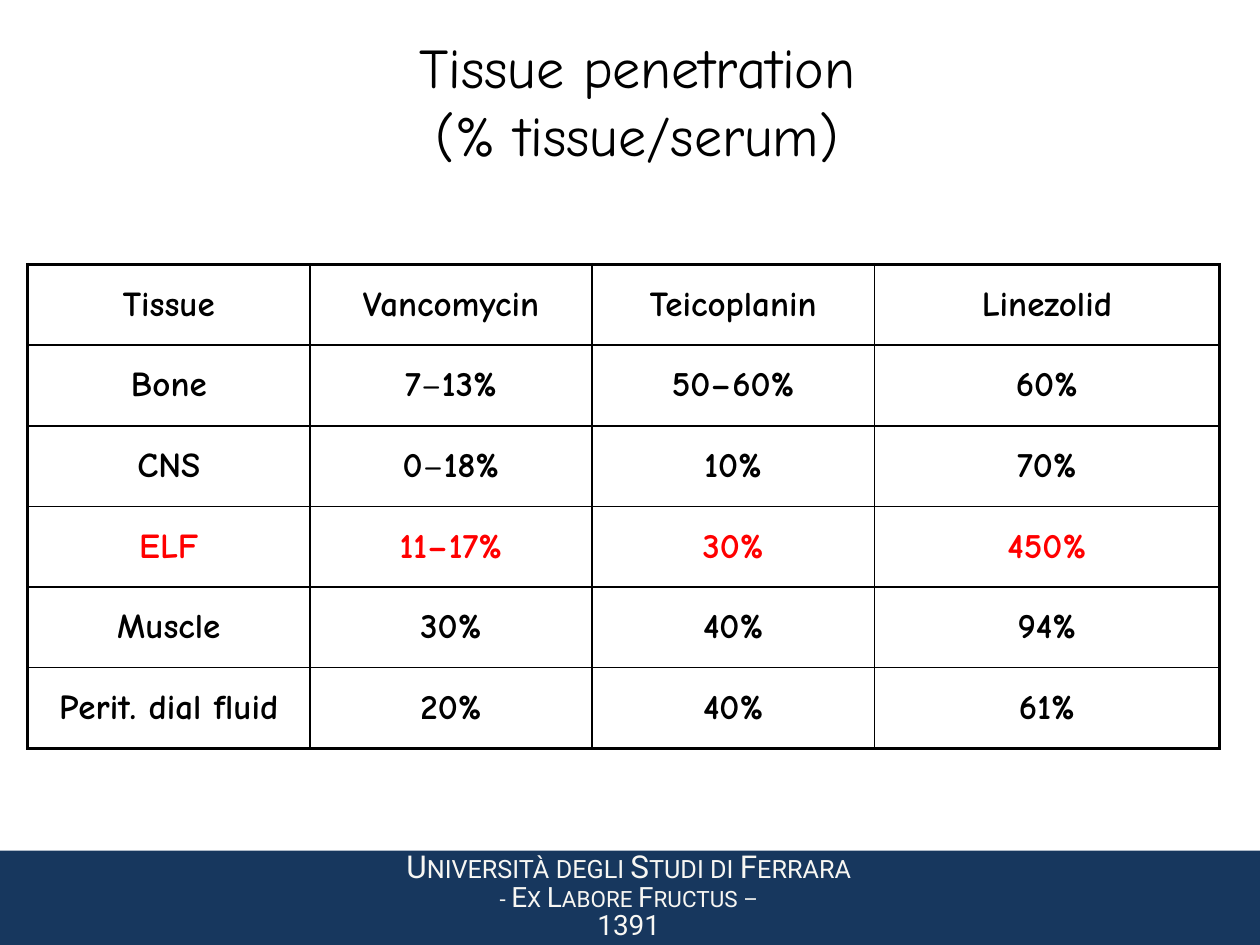
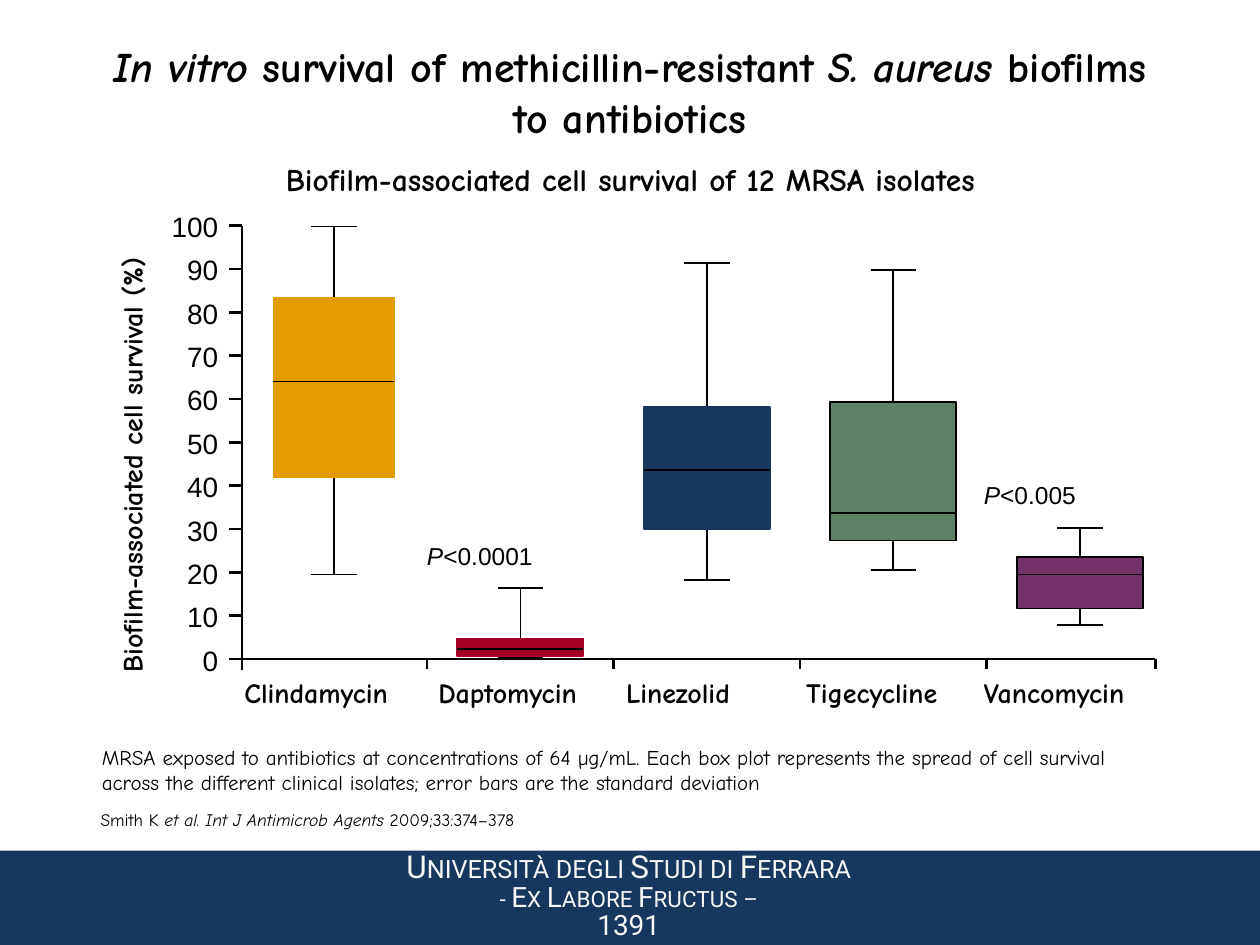
from dataclasses import dataclass

from lxml.etree import SubElement
from pptx import Presentation
from pptx.dml.color import RGBColor
from pptx.enum.shapes import MSO_CONNECTOR as Connector, MSO_SHAPE as Preset
from pptx.enum.text import MSO_ANCHOR as Anchor, PP_ALIGN as Align
from pptx.oxml import parse_xml
from pptx.oxml.ns import nsdecls, qn
from pptx.slide import Slide
from pptx.table import _Cell as Cell
from pptx.text.text import _Paragraph as Paragraph
from pptx.util import Inches, Pt

COLORS = {
    "ink": "000000",
    "alert": "FF0000",
    "navy": "17375E",
    "cream": "F8F7F3",
    "amber": "E49B00",
    "crimson": "A70026",
    "green": "5E8065",
    "purple": "75326A",
}
HAND, SANS, FOOTER_FONT = "Comic Neue", "Arial", "Roboto"

AXIS_X, AXIS_RIGHT = 1.92, 9.17
ZERO_Y, HUNDRED_Y = 5.23, 1.79
FIRST_CENTRE, GROUP_STEP = 2.65, 1.48
FIRST_DIVIDER = 3.39
CAP_HALF = 0.18


@dataclass(frozen=True)
class Words:
    text: str
    bold: bool = False
    italic: bool = False
    small_caps: bool = False


@dataclass(frozen=True)
class Style:
    size: float
    font: str = HAND
    color: str = "ink"


@dataclass(frozen=True)
class Box:
    left: float
    top: float
    width: float
    height: float


@dataclass(frozen=True)
class BoxPlot:
    drug: str
    label_left: float
    low: float
    lower: float
    median: float
    upper: float
    high: float
    fill: str
    outline: str
    width: float = 1.0


FOOTER_LINES = [
    (Words("Università degli Studi di Ferrara", small_caps=True), 18),
    (Words("- Ex Labore Fructus –", small_caps=True), 16),
    (Words("1391"), 16),
]

PENETRATION = [
    ["Tissue", "Vancomycin", "Teicoplanin", "Linezolid"],
    ["Bone", "7–13%", "50–60%", "60%"],
    ["CNS", "0–18%", "10%", "70%"],
    ["ELF", "11–17%", "30%", "450%"],
    ["Muscle", "30%", "40%", "94%"],
    ["Perit. dial fluid", "20%", "40%", "61%"],
]
LIGHT_DASH = {"7–13%", "0–18%"}
COLUMN_WIDTHS = [2.24, 2.24, 2.24, 2.74]
ROW_HEIGHT = 0.64

BOX_PLOTS = [
    BoxPlot("Clindamycin", 1.84, 19.5, 41.9, 64, 83.4, 99.8, "amber", "amber", 0.96),
    BoxPlot("Daptomycin", 3.38, 0.3, 0.6, 2.3, 4.7, 16.3, "crimson", "crimson"),
    BoxPlot("Linezolid", 4.87, 18.3, 29.9, 43.6, 58.1, 91.3, "navy", "navy"),
    BoxPlot("Tigecycline", 6.3, 20.6, 27.3, 33.7, 59.3, 89.8, "green", "ink"),
    BoxPlot("Vancomycin", 7.71, 7.8, 11.6, 19.5, 23.5, 30.2, "purple", "ink"),
]


def rgb(name: str) -> RGBColor:
    return RGBColor.from_string(COLORS[name])


def add_words(paragraph: Paragraph, words: Words, style: Style) -> None:
    run = paragraph.add_run()
    run.text = words.text
    run.font.name = style.font
    run.font.size = Pt(style.size)
    run.font.bold = words.bold
    run.font.italic = words.italic
    run.font.color.rgb = rgb(style.color)
    if words.small_caps:
        run._r.get_or_add_rPr().set("cap", "small")


def add_text(slide: Slide, box: Box, lines: list[list[Words]], style: Style,
             align: Align = Align.LEFT, anchor: Anchor = Anchor.BOTTOM,
             rotation: float = 0) -> None:
    label = slide.shapes.add_textbox(
        Inches(box.left), Inches(box.top), Inches(box.width), Inches(box.height))
    label.rotation = rotation
    frame = label.text_frame
    frame.word_wrap = True
    frame.vertical_anchor = anchor
    paragraph = frame.paragraphs[0]
    paragraph.alignment = align
    for index, line in enumerate(lines):
        if index:
            paragraph.add_line_break()
        for words in line:
            add_words(paragraph, words, style)


def add_title(slide: Slide, left: float, top: float, lines: list[list[Words]],
              size: float) -> None:
    add_text(slide, Box(left, top, 8.5, 1.21), lines, Style(size),
             Align.CENTER, Anchor.MIDDLE)


def add_line(slide: Slide, x1: float, y1: float, x2: float, y2: float,
             weight: float = 1) -> None:
    line = slide.shapes.add_connector(
        Connector.STRAIGHT, Inches(x1), Inches(y1), Inches(x2), Inches(y2))
    line.line.color.rgb = rgb("ink")
    line.line.width = Pt(weight)
    SubElement(line._element.spPr, qn("a:effectLst"))


def add_footer(slide: Slide) -> None:
    band = slide.shapes.add_shape(
        Preset.RECTANGLE, Inches(-0.02), Inches(6.75), Inches(10.02), Inches(0.78))
    band.shadow.inherit = False
    band.fill.solid()
    band.fill.fore_color.rgb = rgb("navy")
    band.line.fill.background()
    frame = band.text_frame
    frame.word_wrap = True
    frame.vertical_anchor = Anchor.TOP
    for index, (words, size) in enumerate(FOOTER_LINES):
        paragraph = frame.add_paragraph() if index else frame.paragraphs[0]
        paragraph.alignment = Align.CENTER
        paragraph.line_spacing = Pt(16)
        add_words(paragraph, words, Style(size, FOOTER_FONT, "cream"))


def set_borders(cell: Cell, outer_sides: dict[str, bool]) -> None:
    properties = cell._tc.get_or_add_tcPr()
    for index, (side, outer) in enumerate(outer_sides.items()):
        width = Pt(2.25 if outer else 1)
        properties.insert(index, parse_xml(
            f'<a:ln{side} {nsdecls("a")} w="{width}"><a:solidFill>'
            f'<a:srgbClr val="{COLORS["ink"]}"/></a:solidFill></a:ln{side}>'))


def cell_words(value: str) -> list[Words]:
    if value not in LIGHT_DASH:
        return [Words(value, bold=True)]
    low, dash, high = value.partition("–")
    return [Words(low, bold=True), Words(dash), Words(high, bold=True)]


def add_penetration_table(slide: Slide) -> None:
    row_count, column_count = len(PENETRATION), len(COLUMN_WIDTHS)
    table = slide.shapes.add_table(
        row_count, column_count, Inches(0.22), Inches(2.1),
        Inches(sum(COLUMN_WIDTHS)), Inches(ROW_HEIGHT * row_count)).table
    table.first_row = False
    table.horz_banding = False
    for column, width in zip(table.columns, COLUMN_WIDTHS):
        column.width = Inches(width)
    for r, values in enumerate(PENETRATION):
        table.rows[r].height = Inches(ROW_HEIGHT)
        style = Style(20, color="alert" if values[0] == "ELF" else "ink")
        for c, value in enumerate(values):
            cell = table.cell(r, c)
            cell.fill.background()
            cell.vertical_anchor = Anchor.MIDDLE
            set_borders(cell, {"L": c == 0, "R": c == column_count - 1,
                               "T": r == 0, "B": r == row_count - 1})
            paragraph = cell.text_frame.paragraphs[0]
            paragraph.alignment = Align.CENTER
            for words in cell_words(value):
                add_words(paragraph, words, style)


def survival_y(percent: float) -> float:
    return ZERO_Y - percent / 100 * (ZERO_Y - HUNDRED_Y)


def add_box_plot(slide: Slide, plot: BoxPlot, centre: float) -> None:
    left, right = centre - plot.width / 2, centre + plot.width / 2
    top, bottom = survival_y(plot.upper), survival_y(plot.lower)
    add_line(slide, centre, survival_y(plot.high), centre, survival_y(plot.low))
    spread = slide.shapes.add_shape(
        Preset.RECTANGLE, Inches(left), Inches(top),
        Inches(plot.width), Inches(bottom - top))
    spread.shadow.inherit = False
    spread.fill.solid()
    spread.fill.fore_color.rgb = rgb(plot.fill)
    spread.line.color.rgb = rgb(plot.outline)
    spread.line.width = Pt(1)
    for value, reach in [(plot.median, plot.width / 2),
                         (plot.high, CAP_HALF), (plot.low, CAP_HALF)]:
        y = survival_y(value)
        add_line(slide, centre - reach, y, centre + reach, y)
    add_text(slide, Box(plot.label_left, 5.31, 1.65, 0.37),
             [[Words(plot.drug, bold=True)]], Style(16))


def add_axes(slide: Slide) -> None:
    add_line(slide, AXIS_X, HUNDRED_Y, AXIS_X, 5.32, 1.5)
    add_line(slide, 1.82, ZERO_Y, AXIS_RIGHT, ZERO_Y, 1.5)
    for percent in range(0, 101, 10):
        y = survival_y(percent)
        if percent:
            add_line(slide, 1.82, y, AXIS_X, y, 1.5)
        add_text(slide, Box(1.13, y - 0.18, 0.7, 0.37), [[Words(str(percent))]],
                 Style(16, SANS), Align.RIGHT)
    dividers = [FIRST_DIVIDER + GROUP_STEP * i for i in range(len(BOX_PLOTS) - 1)]
    for x in [*dividers, AXIS_RIGHT]:
        add_line(slide, x, ZERO_Y, x, 5.31, 1.5)


def build_penetration_slide(slide: Slide) -> None:
    add_footer(slide)
    add_title(slide, 0.81, 0.19,
              [[Words("Tissue penetration")], [Words("(% tissue/serum)")]], 32)
    add_penetration_table(slide)


def build_survival_slide(slide: Slide) -> None:
    add_footer(slide)
    add_title(slide, 0.75, 0.12, [[
        Words("In vitro ", bold=True, italic=True),
        Words("survival of methicillin-resistant ", bold=True),
        Words("S. aureus ", bold=True, italic=True),
        Words("biofilms to antibiotics", bold=True)]], 24)
    add_text(slide, Box(-1.02, 3.19, 4.12, 0.37),
             [[Words("Biofilm-associated cell survival (%)", bold=True)]],
             Style(16), rotation=270)
    add_text(slide, Box(2.17, 1.22, 6.74, 0.4),
             [[Words("Biofilm-associated cell survival of 12 MRSA isolates", bold=True)]],
             Style(18))
    for index, plot in enumerate(BOX_PLOTS):
        add_box_plot(slide, plot, FIRST_CENTRE + GROUP_STEP * index)
    add_axes(slide)
    for left, top, bound in [(3.29, 4.25, "<0.0001"), (7.71, 3.76, "<0.005")]:
        add_text(slide, Box(left, top, 1.7, 0.33),
                 [[Words("P", italic=True), Words(bound)]], Style(14, SANS))
    add_text(slide, Box(0.71, 5.86, 8.6, 0.5), [[Words(
        "MRSA exposed to antibiotics at concentrations of 64 µg/mL. "
        "Each box plot represents the spread of cell survival across the "
        "different clinical isolates; error bars are the standard deviation")]],
        Style(12))
    add_text(slide, Box(0.7, 6.37, 8.59, 0.27), [[
        Words("Smith K "), Words("et al. Int J Antimicrob Agents", italic=True),
        Words(" 2009;33:374–378")]], Style(10), anchor=Anchor.TOP)


def main() -> None:
    deck = Presentation()
    deck.slide_width, deck.slide_height = Inches(10), Inches(7.5)
    blank = deck.slide_layouts[6]
    for build in (build_penetration_slide, build_survival_slide):
        build(deck.slides.add_slide(blank))
    deck.save("out.pptx")


if __name__ == "__main__":
    main()
